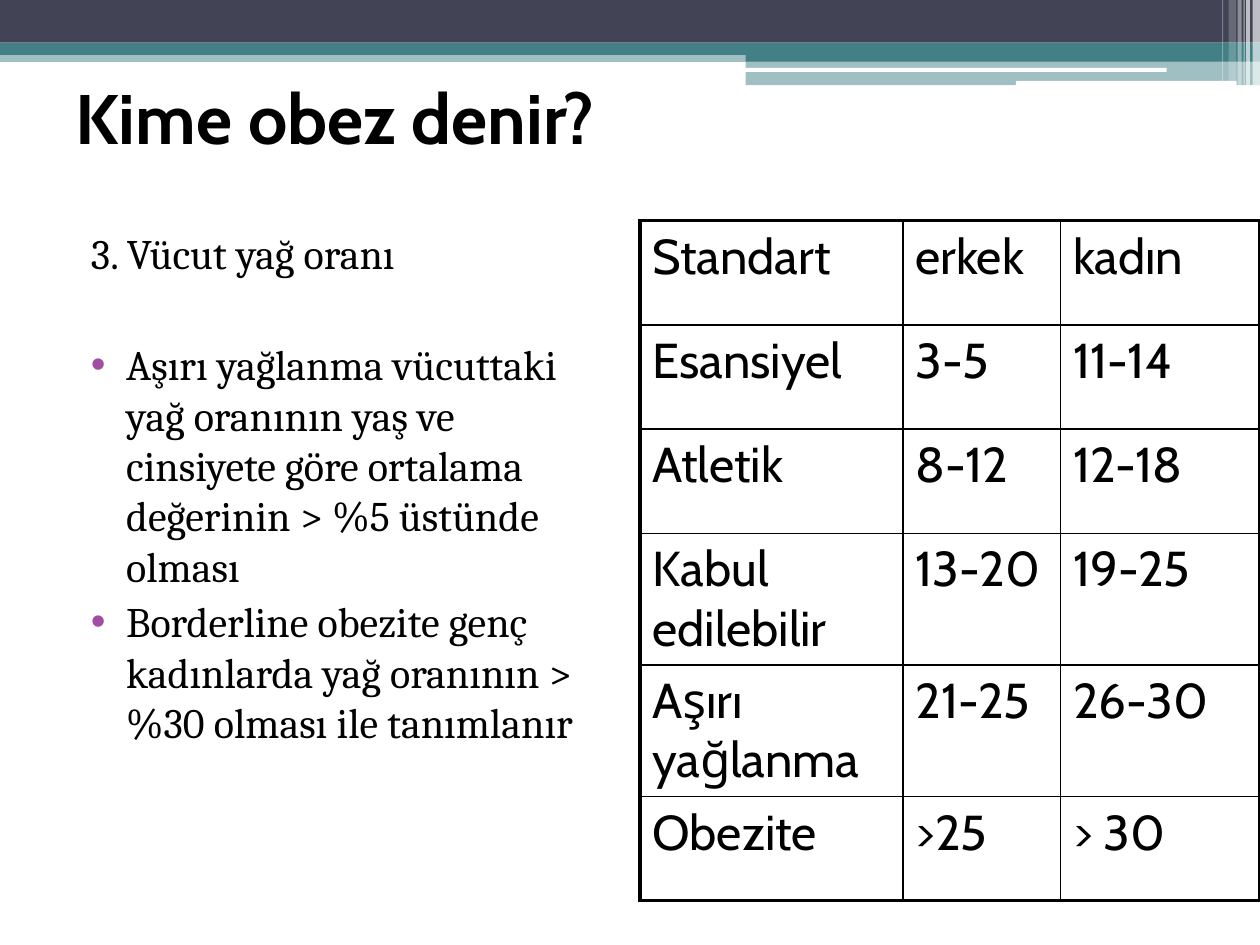
from lxml import etree
from pptx import Presentation
from pptx import util as u
from pptx.dml.color import RGBColor
from pptx.enum import shapes, text
from pptx.oxml.ns import qn

Cm, Pt = u.Cm, u.Pt
theme = {
    "dark": "424456", "teal": "438086", "white": "FFFFFF", "black": "000000", "bullet": "A04DA3",
    "head_font": "Cabin", "body_font": "Cambria",
    "title_size": 40, "body_size": 24, "table_size": 28,
    "thin": 1, "thick": 2.25,
}


def add_xml(parent, tag, **attrs):
    return etree.SubElement(parent, qn(tag), attrs)


def write(p, words, name, size, bold=False):
    r = p.add_run()
    r.text = words
    r.font.color.rgb = RGBColor.from_string(theme["black"])
    for key, value in {"name": name, "size": Pt(size), "bold": bold}.items():
        setattr(r.font, key, value)


prs = Presentation()
prs.slide_width, prs.slide_height = Cm(25.4), Cm(19.05)
s = prs.slides.add_slide(prs.slide_layouts[1])

# Header bands: left, top, width, height, colour, opacity %, rounded
bands = [
    (0, 1.02, 25.4, 0.23, "teal", 50, False),
    (0, 0, 25.4, 0.86, "dark", 100, False),
    (0, 0.86, 25.4, 0.25, "teal", 100, False),
    (15.03, 0.99, 10.37, 0.25, "teal", 100, False),
    (15.03, 1.23, 10.37, 0.49, "teal", 50, False),
    (15.02, 1.37, 8.5, 0.08, "white", 100, True),
    (20.48, 1.63, 4.45, 0.1, "white", 100, True),
    (25.25, 0, 0.15, 1.73, "white", 65, False),
    (25.12, 0, 0.08, 1.73, "white", 65, False),
    (25.07, 0, 0.02, 1.73, "white", 60, False),
    (24.95, 0, 0.08, 1.73, "white", 40, False),
    (24.77, 0, 0.15, 1.63, "white", 20, False),
    (24.64, 0, 0.02, 1.63, "white", 30, False),
]
kinds = shapes.MSO_SHAPE
for left, top, width, height, colour, opacity, rounded in bands:
    kind = kinds.ROUNDED_RECTANGLE if rounded else kinds.RECTANGLE
    sp = s.shapes.add_shape(kind, Cm(left), Cm(top), Cm(width), Cm(height))
    sp.shadow.inherit = False
    sp.line.fill.background()
    sp.fill.solid()
    sp.fill.fore_color.rgb = RGBColor.from_string(theme[colour])
    if opacity < 100:
        clr = sp._element.spPr.find(".//" + qn("a:srgbClr"))
        add_xml(clr, "a:alpha", val=str(opacity * 1000))

# Title and body placeholders
title, body = s.shapes.title, s.placeholders[1]
places = [(title, (1.27, 0.76, 22.86, 3.18)), (body, (1.27, 4.45, 11.23, 12.57))]
for sp, box in places:
    for key, value in zip(("left", "top", "width", "height"), box):
        setattr(sp, key, Cm(value))
    sp.text_frame.auto_size = text.MSO_AUTO_SIZE.NONE
    sp.text_frame.word_wrap = True

title.text_frame.vertical_anchor = text.MSO_ANCHOR.MIDDLE
p = title.text_frame.paragraphs[0]
p.alignment = text.PP_ALIGN.LEFT
write(p, "Kime obez denir?", theme["head_font"], theme["title_size"], True)

# Body list: words, space before, bulleted
items = [
    ("3. Vücut yağ oranı", 3, False),
    ("Aşırı yağlanma vücuttaki yağ oranının yaş ve cinsiyete göre ortalama "
     "değerinin > %5 üstünde olması", 35, True),
    ("Borderline obezite genç kadınlarda yağ oranının > %30 olması ile tanımlanır", 3, True),
]
tf = body.text_frame
for i, (words, before, bulleted) in enumerate(items):
    p = tf.add_paragraph() if i else tf.paragraphs[0]
    p.space_before = Pt(before)
    write(p, words, theme["body_font"], theme["body_size"])
    pPr = p._p.get_or_add_pPr()
    pPr.set("marL", str(Cm(1.02)))
    pPr.set("indent", str(Cm(-0.71)))
    if bulleted:
        add_xml(add_xml(pPr, "a:buClr"), "a:srgbClr", val=theme["bullet"])
        add_xml(pPr, "a:buFont", typeface="Arial")
        add_xml(pPr, "a:buChar", char="•")
    else:
        add_xml(pPr, "a:buNone")

# Body fat table
rows = [
    ("Standart", "erkek", "kadın"),
    ("Esansiyel", "3-5", "11-14"),
    ("Atletik", "8-12", "12-18"),
    ("Kabul edilebilir", "13-20", "19-25"),
    ("Aşırı yağlanma", "21-25", "26-30"),
    ("Obezite", ">25", "> 30"),
]
widths = (5.3, 3.18, 4.02)
row_height = 2.1
frame = s.shapes.add_table(len(rows), len(widths), Cm(12.9), Cm(4.45),
                           Cm(sum(widths)), Cm(row_height * len(rows)))
table = frame.table
table.first_row = table.horz_banding = False
for column, width in zip(table.columns, widths):
    column.width = Cm(width)
for i, row in enumerate(rows):
    table.rows[i].height = Cm(row_height)
    for j, words in enumerate(row):
        cell = table.cell(i, j)
        write(cell.text_frame.paragraphs[0], words, theme["head_font"], theme["table_size"])
        # Outer edges are thick, inner ones thin
        edges = {"a:lnL": j == 0, "a:lnR": j == len(row) - 1,
                 "a:lnT": i == 0, "a:lnB": i == len(rows) - 1}
        tcPr = cell._tc.get_or_add_tcPr()
        for tag, outer in edges.items():
            ln = add_xml(tcPr, tag, w=str(Pt(theme["thick" if outer else "thin"])))
            add_xml(add_xml(ln, "a:solidFill"), "a:srgbClr", val=theme["black"])
        cell.fill.background()

prs.save("out.pptx")
